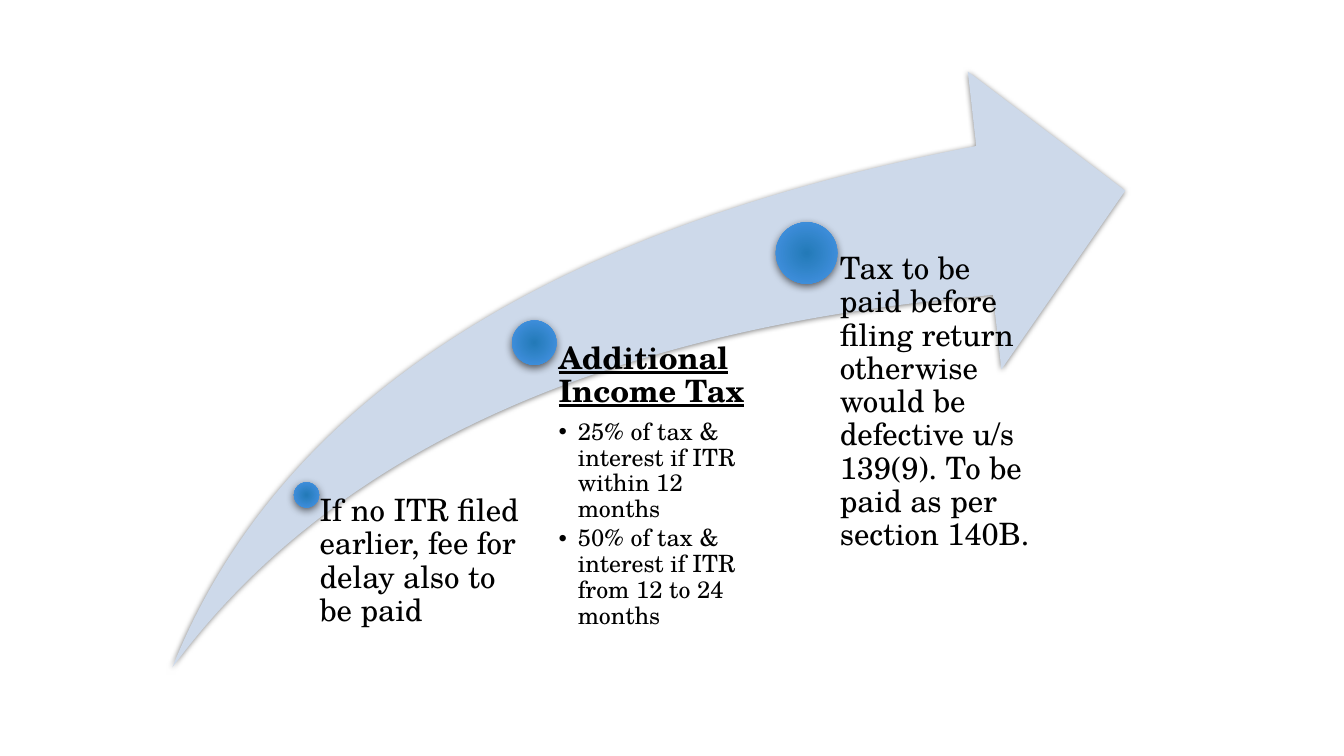
from dataclasses import dataclass

from lxml import etree
from pptx import Presentation
from pptx.dml.color import RGBColor
from pptx.enum.shapes import MSO_SHAPE
from pptx.enum.text import MSO_ANCHOR, MSO_AUTO_SIZE, PP_ALIGN
from pptx.oxml.ns import qn
from pptx.util import Inches, Pt

SWOOSH, OVAL = MSO_SHAPE.SWOOSH_ARROW, MSO_SHAPE.OVAL
TOP, LEFT, NO_AUTOFIT = MSO_ANCHOR.TOP, PP_ALIGN.LEFT, MSO_AUTO_SIZE.NONE

FONT = "TeX Gyre Schola"
COLORS = {"arrow": "CDD9EA", "dot_core": "237AB8", "dot_rim": "4895E7",
          "text": "000000", "shadow": "000000"}
TEXT_BOTTOM = 6.62
BULLET_INDENT = 0.19


@dataclass
class Line:
    text: str
    size: int = 22
    gap: float = 0.35  # space after, as a share of the size
    heading: bool = False
    bullet: bool = False


@dataclass
class Milestone:
    center_x: float
    center_y: float
    diameter: float
    text_width: float
    inset: float
    lines: list[Line]

    @property
    def has_list(self) -> bool:
        return any(line.bullet for line in self.lines)


MILESTONES = [
    Milestone(3.04, 4.91, 0.25, 2.2, 0.13, [
        Line("If no ITR filed earlier, fee for delay also to be paid")]),
    Milestone(5.3, 3.4, 0.44, 2.27, 0.24, [
        Line("Additional Income Tax", heading=True),
        Line("25% of tax & interest if ITR within 12 months", 17, 0.15, bullet=True),
        Line("50% of tax & interest if ITR from 12 to 24 months", 17, 0.15, bullet=True)]),
    Milestone(8, 2.51, 0.61, 2.27, 0.33, [
        Line("Tax to be paid before filing return otherwise would be defective u/s "
             "139(9). To be paid as per section 140B.")]),
]


def add_color(parent, color: str, alpha: int = 100) -> None:
    srgb = etree.SubElement(parent, qn("a:srgbClr"), val=color)
    if alpha < 100:
        etree.SubElement(srgb, qn("a:alpha"), val=str(alpha * 1000))


def add_shadow(shape, alpha: int, blur: float, distance: float) -> None:
    shape.shadow.inherit = False
    effects = shape._element.spPr.find(qn("a:effectLst"))
    shadow = etree.SubElement(effects, qn("a:outerShdw"), blurRad=str(Pt(blur)),
                              dist=str(Pt(distance)), dir="5400000", rotWithShape="0")
    add_color(shadow, COLORS["shadow"], alpha)


def fill_radial(shape, core: str, rim: str) -> None:
    shape.fill.gradient()
    gradient = shape._element.spPr.find(qn("a:gradFill"))
    for child in list(gradient):
        gradient.remove(child)
    stops = etree.SubElement(gradient, qn("a:gsLst"))
    for position, color in (("0", core), ("100000", rim)):
        add_color(etree.SubElement(stops, qn("a:gs"), pos=position), color)
    circle = etree.SubElement(gradient, qn("a:path"))
    circle.set("path", "circle")
    etree.SubElement(circle, qn("a:fillToRect"), l="100000", t="100000",
                     r="100000", b="100000")


def add_arrow(slide) -> None:
    arrow = slide.shapes.add_shape(SWOOSH, Inches(1.71), Inches(0.71),
                                   Inches(9.45), Inches(5.91))
    arrow.adjustments[0] = arrow.adjustments[1] = 0.25
    arrow.fill.solid()
    arrow.fill.fore_color.rgb = RGBColor.from_string(COLORS["arrow"])
    arrow.line.fill.background()
    add_shadow(arrow, 50, 4, 1)


def add_dot(slide, milestone: Milestone) -> None:
    radius = milestone.diameter / 2
    dot = slide.shapes.add_shape(
        OVAL, Inches(milestone.center_x - radius), Inches(milestone.center_y - radius),
        Inches(milestone.diameter), Inches(milestone.diameter))
    fill_radial(dot, COLORS["dot_core"], COLORS["dot_rim"])
    dot.line.fill.background()
    add_shadow(dot, 60, 6, 2)


def write_line(paragraph, line: Line) -> None:
    paragraph.alignment = LEFT
    paragraph.level = int(line.bullet)
    paragraph.line_spacing = 0.9
    paragraph.space_before = Pt(0)
    paragraph.space_after = Pt(line.size * line.gap)
    indent = Inches(BULLET_INDENT) if line.bullet else 0
    properties = paragraph._p.get_or_add_pPr()
    properties.set("marL", str(indent))
    properties.set("indent", str(-indent))
    if line.bullet:
        etree.SubElement(properties, qn("a:buChar"), char="•")
    else:
        etree.SubElement(properties, qn("a:buNone"))
    run = paragraph.add_run()
    run.text = line.text
    run.font.name = FONT
    run.font.size = Pt(line.size)
    run.font.bold = run.font.underline = line.heading
    run.font.color.rgb = RGBColor.from_string(COLORS["text"])


def add_caption(slide, milestone: Milestone, body) -> None:
    bounds = [Inches(value) for value in (
        milestone.center_x, milestone.center_y,
        milestone.text_width, TEXT_BOTTOM - milestone.center_y)]
    if milestone.has_list:
        caption = body
        caption.left, caption.top, caption.width, caption.height = bounds
        slide.shapes._spTree.append(caption._element)  # in front of the arrow
    else:
        caption = slide.shapes.add_textbox(*bounds)
    frame = caption.text_frame
    frame.word_wrap = True
    frame.auto_size = NO_AUTOFIT
    frame.vertical_anchor = TOP
    frame.margin_left = Inches(milestone.inset)
    frame.margin_top = frame.margin_right = frame.margin_bottom = 0
    for index, line in enumerate(milestone.lines):
        write_line(frame.add_paragraph() if index else frame.paragraphs[0], line)


def main() -> None:
    deck = Presentation()
    deck.slide_width, deck.slide_height = Inches(13.33), Inches(7.5)
    slide = deck.slides.add_slide(deck.slide_layouts[1])
    unused_title = slide.shapes.title._element
    unused_title.getparent().remove(unused_title)
    body = slide.placeholders[1]

    # Rising arrow, then each milestone dot with its caption
    add_arrow(slide)
    for milestone in MILESTONES:
        add_dot(slide, milestone)
        add_caption(slide, milestone, body)
    deck.save("out.pptx")


if __name__ == "__main__":
    main()
